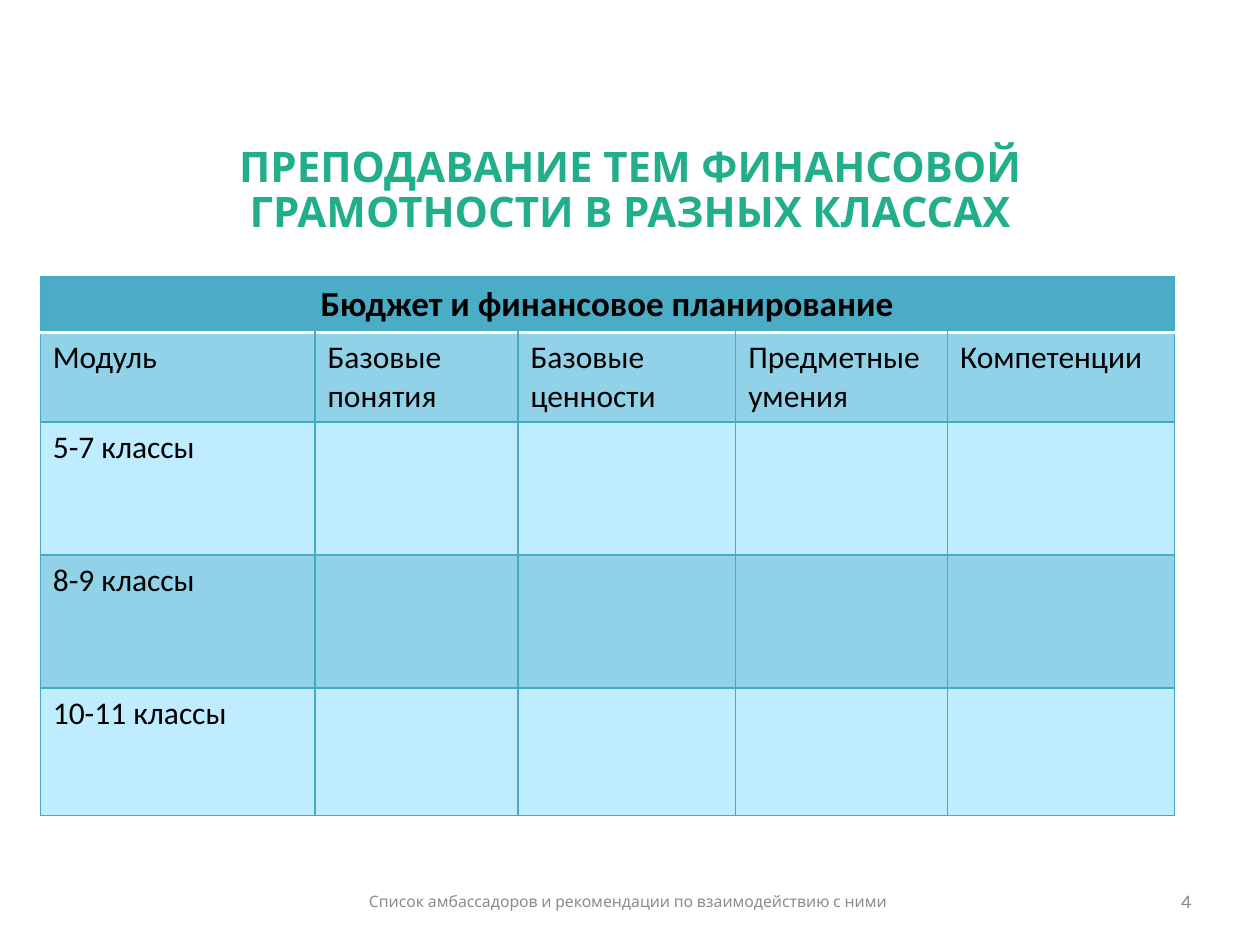
from lxml import etree
from pptx import Presentation
from pptx.dml.color import RGBColor
from pptx.enum import text
from pptx.oxml.ns import qn
from pptx.util import Pt

COLORS = {
    "title": "23AE8B", "footer": "8C8C8C", "text": "000000",
    "header": "4BACC6", "band": "91D2E8", "light": "BFECFF",
    "grid": "46AAC5", "white": "FFFFFF",
}
COLUMN_WIDTHS = [157, 116, 124.5, 121, 129.5]
ROW_HEIGHTS = [31.5, 51, 76, 76, 73]
TOPIC = "Бюджет и финансовое планирование"
HEADINGS = ["Модуль", "Базовые понятия", "Базовые ценности",
            "Предметные умения", "Компетенции"]
GRADES = ["5-7 классы", "8-9 классы", "10-11 классы"]
ALIGN = text.PP_ALIGN


class SlideBuilder:
    heading_font = "Karla"
    table_font = "Calibri"

    def __init__(self, slide):
        self.slide = slide

    def color(self, name):
        return RGBColor.from_string(COLORS[name])

    def format(self, paragraph, face, size, color, bold=False, align=ALIGN.LEFT):
        paragraph.alignment = align
        font = paragraph.font
        font.name, font.size, font.bold = face, Pt(size), bold
        font.color.rgb = self.color(color)

    def title(self, wording, left, top, width, height):
        title = self.slide.shapes.title
        title.left, title.top = Pt(left), Pt(top)
        title.width, title.height = Pt(width), Pt(height)
        frame = title.text_frame
        frame.text = wording
        frame.auto_size = text.MSO_AUTO_SIZE.NONE
        frame.vertical_anchor = text.MSO_ANCHOR.TOP
        heading = frame.paragraphs[0]
        heading.line_spacing = 0.9
        self.format(heading, self.heading_font, 24, "title", True, ALIGN.CENTER)

    def footer(self, wording, left, width, size, align=ALIGN.LEFT):
        box = self.slide.shapes.add_textbox(Pt(left), Pt(500.5), Pt(width), Pt(28.75))
        frame = box.text_frame
        frame.word_wrap = True
        frame.vertical_anchor = text.MSO_ANCHOR.MIDDLE
        frame.text = wording
        self.format(frame.paragraphs[0], self.heading_font, size, "footer", align=align)

    def borders(self, cell, **special):
        """Draw grid lines; special maps a side (L, R, T, B) to (color, width)."""
        properties = cell._tc.get_or_add_tcPr()
        for index, side in enumerate("LRTB"):
            color, width = special.get(side, ("grid", 0.75))
            line = etree.Element(qn(f"a:ln{side}"), w=str(Pt(width)))
            fill = etree.SubElement(line, qn("a:solidFill"))
            etree.SubElement(fill, qn("a:srgbClr"), val=COLORS[color])
            properties.insert(index, line)

    def cell(self, cell, wording, fill, size=18, bold=False, align=ALIGN.LEFT, **special):
        cell.text = wording
        self.format(cell.text_frame.paragraphs[0], self.table_font, size, "text", bold, align)
        cell.fill.solid()
        cell.fill.fore_color.rgb = self.color(fill)
        self.borders(cell, **special)

    def table(self, left, top):
        rows, columns = len(ROW_HEIGHTS), len(COLUMN_WIDTHS)
        table = self.slide.shapes.add_table(
            rows, columns, Pt(left), Pt(top),
            Pt(sum(COLUMN_WIDTHS)), Pt(sum(ROW_HEIGHTS))).table
        for column, width in zip(table.columns, COLUMN_WIDTHS):
            column.width = Pt(width)
        for row, height in zip(table.rows, ROW_HEIGHTS):
            row.height = Pt(height)

        divider = ("white", 2)
        table.cell(0, 0).merge(table.cell(0, columns - 1))
        for c in range(columns):
            self.cell(table.cell(0, c), "" if c else TOPIC, "header", 20, True,
                      ALIGN.CENTER, B=divider)
        body = [HEADINGS] + [[grade] + [""] * (columns - 1) for grade in GRADES]
        for r, wordings in enumerate(body, 1):
            fill = "band" if r % 2 else "light"
            special = {"T": divider} if r == 1 else {}
            for c, wording in enumerate(wordings):
                self.cell(table.cell(r, c), wording, fill, **special)


def main():
    deck = Presentation()
    deck.slide_width, deck.slide_height = Pt(720), Pt(540)
    builder = SlideBuilder(deck.slides.add_slide(deck.slide_layouts[5]))
    builder.title("ПРЕПОДАВАНИЕ ТЕМ ФИНАНСОВОЙ ГРАМОТНОСТИ В РАЗНЫХ КЛАССАХ",
                  36, 80, 648, 62.5)
    builder.table(23, 158.25)
    builder.footer("Список амбассадоров и рекомендации по взаимодействию с ними",
                   203.75, 316, 9)
    builder.footer("4", 520, 168, 11, ALIGN.RIGHT)
    deck.save("out.pptx")


if __name__ == "__main__":
    main()
